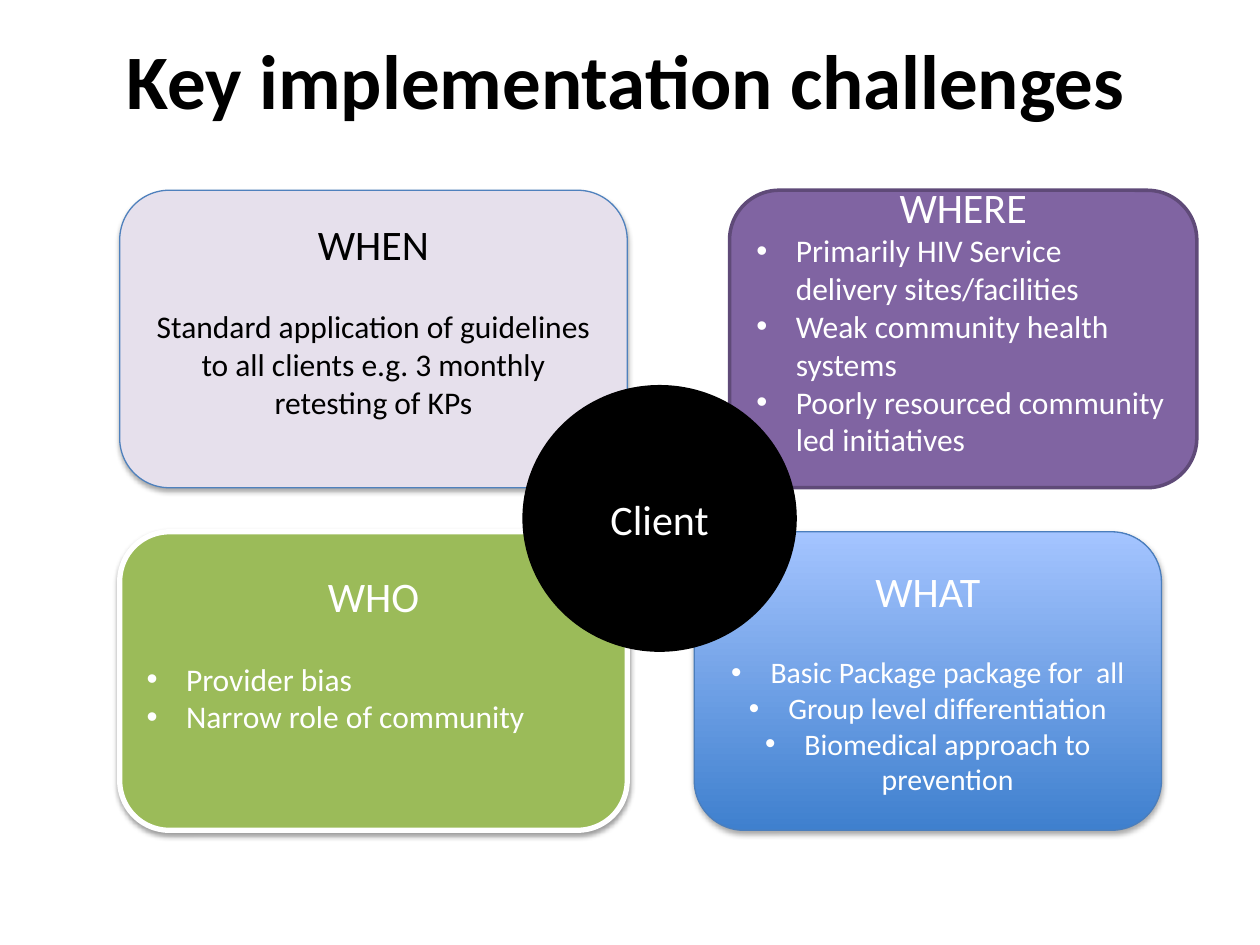
import pptx
import pptx.util
import pptx.dml.color
import pptx.enum.shapes
import pptx.enum.text
import pptx.oxml
import pptx.oxml.ns

Pt = pptx.util.Pt
kinds = pptx.enum.shapes.MSO_SHAPE
align = pptx.enum.text.PP_ALIGN
middle = pptx.enum.text.MSO_ANCHOR.MIDDLE
qn = pptx.oxml.ns.qn


def color(text):
    return pptx.dml.color.RGBColor.from_string(text)


def write(para, text, size, ink, bold=False):
    """Fill one centred paragraph and format its run."""
    para.text = text
    para.alignment = align.CENTER
    font = para.runs[0].font
    font.name, font.size, font.bold = "Calibri", Pt(size), bold
    font.color.rgb = color(ink)


deck = pptx.Presentation()
deck.slide_width, deck.slide_height = Pt(720), Pt(540)
slide = deck.slides.add_slide(deck.slide_layouts[6])

title = slide.shapes.add_textbox(Pt(34), Pt(0), Pt(648), Pt(90)).text_frame
title.word_wrap = True
title.vertical_anchor = middle
write(title.paragraphs[0], "Key implementation challenges", 44, "000000", True)

# box, fill, line, line width, shadow (blur, distance, opacity),
# ink, body size, bullets, centred body, gap under heading, bottom inset, texts
cards = [
    ((68.4, 108.7, 290, 170), ["E6E0EC"], "4F81BD", 0.75, (3.1, 1.8, 35),
     "000000", 18, False, True, 22, 25.6,
     ["WHEN", "Standard application of guidelines to all clients e.g. 3 monthly retesting of KPs"]),
    ((416.9, 108.7, 267, 170), ["8064A2"], "5F4A78", 2, None,
     "FFFFFF", 18, True, False, 0, 25.6,
     ["WHERE", "Primarily HIV Service delivery sites/facilities",
      "Weak community health systems", "Poorly resourced community led initiatives"]),
    ((68.4, 303.9, 290, 170.6), ["9BBB59"], "FFFFFF", 3, (3.1, 1.6, 38),
     "FFFFFF", 18, True, False, 22, 35.6,
     ["WHO", "Provider bias", "Narrow role of community"]),
    ((396.7, 303.9, 267, 170.6), ["3F80CE", "A4C4FF"], "4B7EBC", 0.75, (3.1, 1.8, 35),
     "FFFFFF", 17, True, True, 22, 3.6,
     ["WHAT", "Basic Package package for  all", "Group level differentiation",
      "Biomedical approach to prevention"]),
    ((299.5, 221, 154.8, 150.5), ["000000"], "000000", 2, None,
     "FFFFFF", 18, False, True, 0, 3.6, ["Client"]),
]

for box, fills, line, width, shade, ink, size, dots, mid, gap, foot, texts in cards:
    kind = kinds.OVAL if texts == ["Client"] else kinds.ROUNDED_RECTANGLE
    card = slide.shapes.add_shape(kind, *[Pt(n) for n in box])
    card.line.color.rgb = color(line)
    card.line.width = Pt(width)
    if len(fills) == 1:
        card.fill.solid()
        card.fill.fore_color.rgb = color(fills[0])
    else:
        card.fill.gradient()
        card.fill.gradient_angle = 90
        for stop, tint, place in zip(card.fill.gradient_stops, fills, (0, 1)):
            stop.color.rgb = color(tint)
            stop.position = place

    card.shadow.inherit = False
    if shade:
        blur, drop, dark = shade
        effect = card._element.spPr.find(qn("a:effectLst"))
        effect.append(pptx.oxml.parse_xml(
            f'<a:outerShdw {pptx.oxml.ns.nsdecls("a")} blurRad="{Pt(blur)}" '
            f'dist="{Pt(drop)}" dir="5400000" rotWithShape="0"><a:srgbClr val="000000">'
            f'<a:alpha val="{dark * 1000}"/></a:srgbClr></a:outerShdw>'))

    frame = card.text_frame
    frame.word_wrap = True
    frame.vertical_anchor = middle
    frame.margin_bottom = Pt(foot)
    head = frame.paragraphs[0]
    write(head, texts[0], 24, ink)
    head.space_after = Pt(gap)
    for text in texts[1:]:
        para = frame.add_paragraph()
        write(para, text, size, ink)
        if not mid:
            para.alignment = align.LEFT
        if dots:
            props = para._p.get_or_add_pPr()
            props.set("marL", str(Pt(22.5)))
            props.set("indent", str(Pt(-22.5)))
            font = pptx.oxml.ns.nsdecls("a")
            props.append(pptx.oxml.parse_xml(f'<a:buFont {font} typeface="Arial"/>'))
            props.append(pptx.oxml.parse_xml(f'<a:buChar {font} char="•"/>'))

deck.save("out.pptx")
